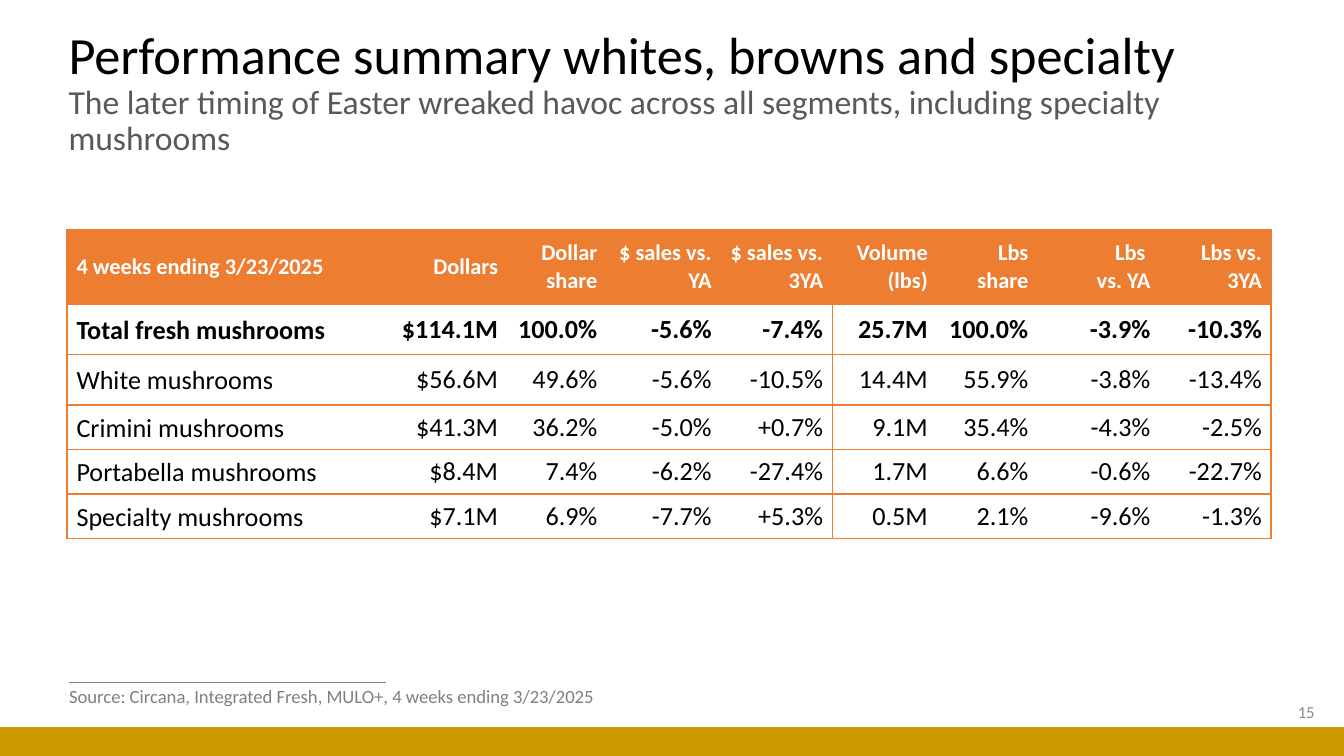
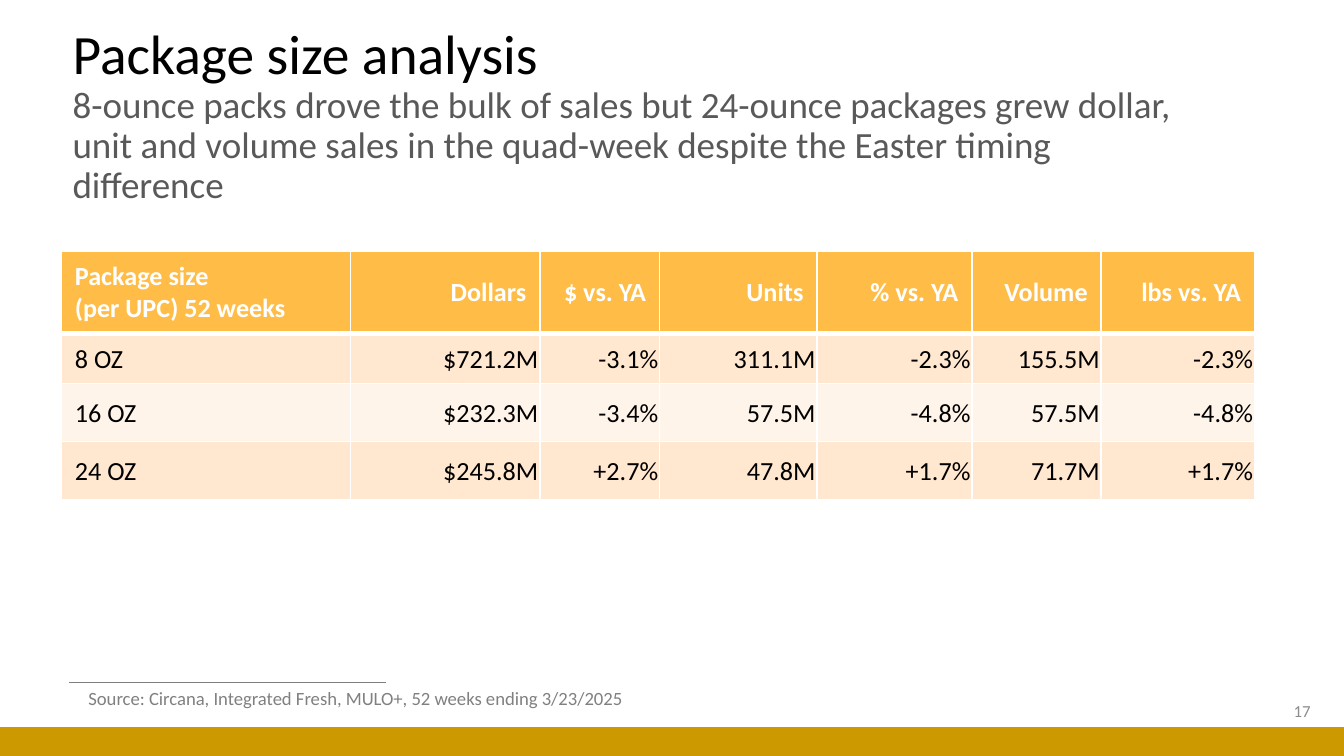
from lxml.etree import SubElement
from pptx import Presentation
from pptx.dml.color import RGBColor
from pptx.enum.shapes import MSO_CONNECTOR as Connector, MSO_SHAPE as Shape
from pptx.enum.text import MSO_ANCHOR as Anchor, MSO_AUTO_SIZE as AutoSize, PP_ALIGN as Align
from pptx.oxml.ns import qn
from pptx.util import Pt

FONT = "Calibri"
BLACK, WHITE = "000000", "FFFFFF"
SUBTITLE_GRAY, SOURCE_GRAY, NUMBER_GRAY = "595959", "808080", "8C8C8C"
GOLD, ORANGE, AMBER = "CC9900", "ED7D31", "FFBD47"
PEACH, LIGHT_PEACH = "FFE8CF", "FFF4E9"
TITLE_ONLY = 5

SEGMENT_ROWS = [
    ["4 weeks ending 3/23/2025", "Dollars", "Dollar share", "$ sales vs. YA", "$ sales vs. 3YA",
     "Volume (lbs)", "Lbs\nshare", "Lbs \vvs. YA", "Lbs vs. 3YA"],
    ["Total fresh mushrooms", "$114.1M", "100.0%", "-5.6%", "-7.4%", "25.7M", "100.0%", "-3.9%", "-10.3%"],
    ["White mushrooms", "$56.6M", "49.6%", "-5.6%", "-10.5%", "14.4M", "55.9%", "-3.8%", "-13.4%"],
    ["Crimini mushrooms", "$41.3M", "36.2%", "-5.0%", "+0.7%", "9.1M", "35.4%", "-4.3%", "-2.5%"],
    ["Portabella mushrooms", "$8.4M", "7.4%", "-6.2%", "-27.4%", "1.7M", "6.6%", "-0.6%", "-22.7%"],
    ["Specialty mushrooms", "$7.1M", "6.9%", "-7.7%", "+5.3%", "0.5M", "2.1%", "-9.6%", "-1.3%"],
]
PACKAGE_ROWS = [
    ["Package size \v(per UPC) 52 weeks", "Dollars", "$ vs. YA", "Units", "% vs. YA", "Volume", "lbs vs. YA"],
    ["8 OZ", "$721.2M", "-3.1%", "311.1M", "-2.3%", "155.5M", "-2.3%"],
    ["16 OZ", "$232.3M", "-3.4%", "57.5M", "-4.8%", "57.5M", "-4.8%"],
    ["24 OZ", "$245.8M", "+2.7%", "47.8M", "+1.7%", "71.7M", "+1.7%"],
]


def rgb(color):
    return RGBColor.from_string(color)


def points(*lengths):
    return [Pt(length) for length in lengths]


def set_font(font, size, color, bold=False):
    font.name, font.size, font.bold = FONT, Pt(size), bold
    font.color.rgb = rgb(color)


def set_borders(cell, color, **widths):
    """Draw the sides named L, R, T, B at the given widths and clear the others."""
    properties = cell._tc.get_or_add_tcPr()
    for place, side in enumerate("LRTB"):
        width = widths.get(side, 0)
        line = SubElement(properties, qn(f"a:ln{side}"), w=str(Pt(width)))
        if width:
            SubElement(SubElement(line, qn("a:solidFill")), qn("a:srgbClr"), val=color)
        else:
            SubElement(line, qn("a:noFill"))
        properties.insert(place, line)


class Deck:
    def __init__(self):
        self.presentation = Presentation()
        self.presentation.slide_width, self.presentation.slide_height = points(720, 405)
        self.slide = None

    def start_slide(self):
        """Add a slide with the footer rule and the gold band."""
        self.slide = self.presentation.slides.add_slide(self.presentation.slide_layouts[TITLE_ONLY])
        rule = self.slide.shapes.add_connector(Connector.STRAIGHT, *points(36.8, 365.6, 206.8, 365.6))
        rule.line.color.rgb, rule.line.width = rgb(SOURCE_GRAY), Pt(0.5)
        SubElement(rule._element.spPr, qn("a:effectLst"))
        band = self.slide.shapes.add_shape(Shape.RECTANGLE, *points(0, 389.5, 720, 15.5))
        band.shadow.inherit = False
        band.fill.solid()
        band.fill.fore_color.rgb = rgb(GOLD)
        band.line.fill.background()

    def title(self, heading, subtitle, box, heading_size, subtitle_size):
        title = self.slide.shapes.title
        title.left, title.top, title.width, title.height = points(*box)
        frame = title.text_frame
        frame.auto_size, frame.vertical_anchor = AutoSize.NONE, Anchor.MIDDLE
        paragraph = frame.paragraphs[0]
        paragraph.text = f"{heading}\v{subtitle}"
        paragraph.alignment, paragraph.line_spacing = Align.LEFT, 0.9
        set_font(paragraph.font, heading_size, BLACK)
        heading_run, subtitle_run = paragraph.runs
        set_font(heading_run.font, heading_size, BLACK)
        set_font(subtitle_run.font, subtitle_size, SUBTITLE_GRAY)

    def text(self, words, box, size, color, align=Align.LEFT):
        frame = self.slide.shapes.add_textbox(*points(*box)).text_frame
        frame.text = words
        frame.paragraphs[0].alignment = align
        set_font(frame.paragraphs[0].font, size, color)
        return frame

    def source(self, words, left, top):
        frame = self.text(words, (left, top, 306.7, 19.4), 10, SOURCE_GRAY)
        frame.word_wrap, frame.auto_size = False, AutoSize.SHAPE_TO_FIT_TEXT

    def page_number(self, number, left, top):
        frame = self.text(number, (left, top, 162, 21.6), 9, NUMBER_GRAY, Align.RIGHT)
        frame.word_wrap, frame.vertical_anchor = True, Anchor.MIDDLE

    def table(self, rows, left, top, widths, heights, style_cell):
        """Fill a table; style_cell(cell, row, column) sets fill, borders and fonts."""
        frame = self.slide.shapes.add_table(
            len(rows), len(widths), *points(left, top, sum(widths), sum(heights)))
        table = frame.table
        table.horz_banding = table.first_row = False
        for column, width in zip(table.columns, widths):
            column.width = Pt(width)
        for row, height in zip(table.rows, heights):
            row.height = Pt(height)
        for r, values in enumerate(rows):
            for c, value in enumerate(values):
                cell = table.cell(r, c)
                cell.text, cell.vertical_anchor = value, Anchor.MIDDLE
                for paragraph in cell.text_frame.paragraphs:
                    paragraph.alignment = Align.RIGHT if c else Align.LEFT
                style_cell(cell, r, c)


def style_cell_text(cell, fill, size, color, bold, margins):
    if fill:
        cell.fill.solid()
        cell.fill.fore_color.rgb = rgb(fill)
    else:
        cell.fill.background()
    cell.margin_left, cell.margin_top, cell.margin_right, cell.margin_bottom = points(*margins)
    for paragraph in cell.text_frame.paragraphs:
        set_font(paragraph.font, size, color, bold)


def style_segment_cell(cell, row, column):
    header = row == 0
    label = cell.text_frame.paragraphs[0]
    if column == 0 and not header:
        label.line_spacing, label.space_after = 1.07, Pt(8)
    style_cell_text(cell, ORANGE if header else None, 12 if header else 14,
                    WHITE if header else BLACK, row <= 1, (5, 0, 5, 0))
    # Frames enclose the dollar columns and the volume columns.
    set_borders(cell, ORANGE, T=1, B=1, L=int(column in (0, 5)), R=int(column in (4, 8)))


def style_package_cell(cell, row, column):
    if row == 0:
        style_cell_text(cell, AMBER, 14, WHITE, True, (7.2, 3.6, 7.2, 3.6))
    else:
        side = 0.7 if column else 7.2
        style_cell_text(cell, PEACH if row % 2 else LIGHT_PEACH, 14, BLACK, False, (side, 0.7, side, 0))
    set_borders(cell, WHITE, L=1, R=1, T=3 if row == 1 else 1, B=3 if row == 0 else 1)


def add_segment_summary(deck):
    deck.start_slide()
    deck.title("Performance summary whites, browns and specialty",
               "The later timing of Easter wreaked havoc across all segments, including specialty mushrooms",
               (29.5, 21.6, 637.2, 56.9), 28, 18)
    deck.page_number("15", 549.4, 370.8)
    deck.source("Source: Circana, Integrated Fresh, MULO+, 4 weeks ending 3/23/2025", 30, 363.6)
    deck.table(SEGMENT_ROWS, 36, 123.1, [170.5, 65.4, 53.2, 61.2, 59.7, 56.1, 53.9, 65.4, 59.7],
               [39.6] + [27.2] * 2 + [23.8] * 3, style_segment_cell)


def add_package_sizes(deck):
    deck.start_slide()
    deck.title("Package size analysis",
               "8-ounce packs drove the bulk of sales but 24-ounce packages grew dollar, unit and volume "
               "sales in the quad-week despite the Easter timing difference",
               (31.7, 24.5, 614.2, 76.3), 29.7, 19.8)
    deck.page_number("17", 547.2, 370.1)
    deck.source("Source: Circana, Integrated Fresh, MULO+, 52 weeks ending 3/23/2025", 40.3, 364.3)
    deck.table(PACKAGE_ROWS, 32.9, 134.6, [154.8, 101.5, 64.2, 84.3, 83, 69.3, 82.1],
               [44.3, 26.6, 31.1, 31.1], style_package_cell)


def main():
    deck = Deck()
    add_segment_summary(deck)
    add_package_sizes(deck)
    deck.presentation.save("out.pptx")


if __name__ == "__main__":
    main()
